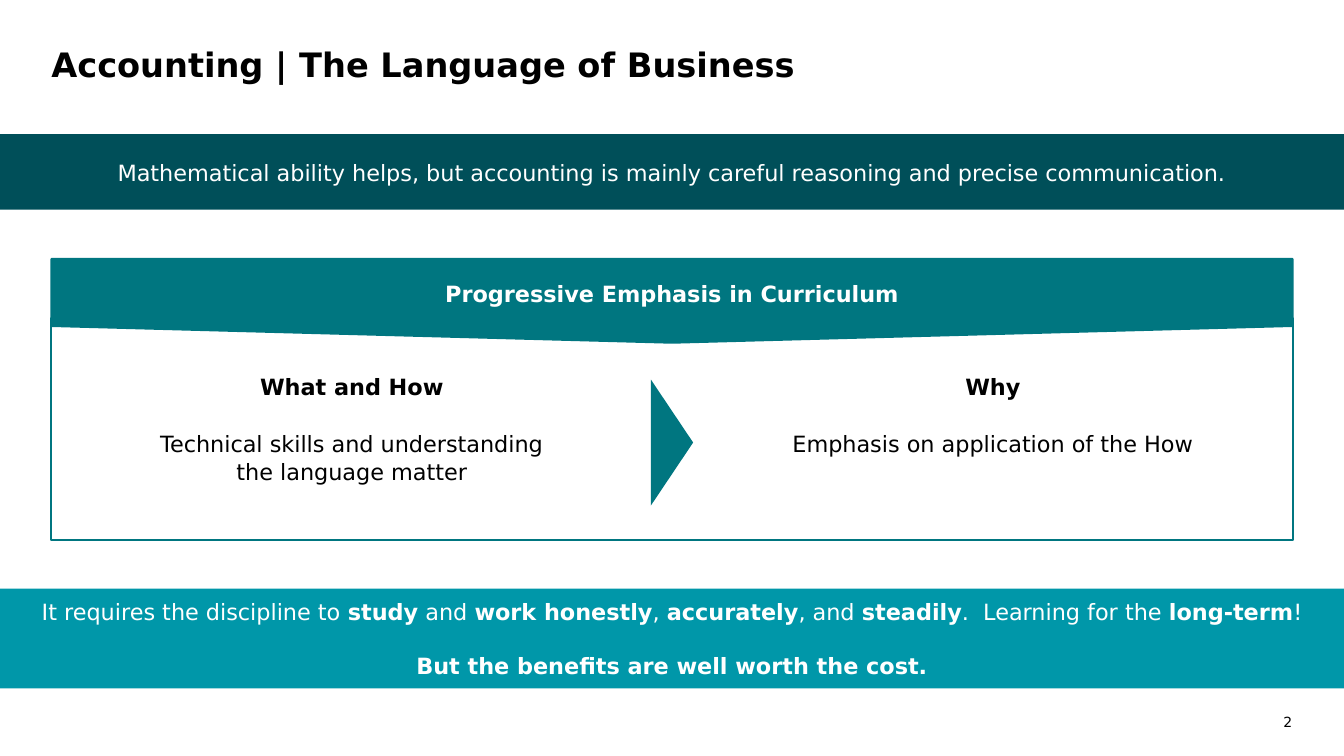
import dataclasses
import typing

import pptx
import pptx.dml.color
import pptx.enum.shapes
import pptx.enum.text
import pptx.util

Pt = pptx.util.Pt
SHAPE = pptx.enum.shapes.MSO_SHAPE
ALIGN = pptx.enum.text.PP_ALIGN
ANCHOR = pptx.enum.text.MSO_ANCHOR

FONT = "DejaVu Sans"
COLORS = {
    "white": "FFFFFF",
    "black": "000000",
    "dark": "004F59",
    "teal": "007680",
    "bright": "0097A9",
}
SLIDE_W, SLIDE_H = 960, 540
MARGIN = 36.7
CONTENT_W = SLIDE_W - 2 * MARGIN
COLUMN_W = 315.4


@dataclasses.dataclass
class Run:
    text: str
    bold: bool = False


@dataclasses.dataclass
class Block:
    """A filled shape with optional outline and text."""
    kind: SHAPE
    box: tuple[float, float, float, float]
    fill: str
    line: str | None = None
    paragraphs: typing.Sequence[typing.Sequence[Run]] = ()
    color: str = "white"
    anchor: ANCHOR = ANCHOR.MIDDLE
    spacing: float = 1.06
    gap: float = 20
    rotation: float = 0


def rgb(name: str) -> pptx.dml.color.RGBColor:
    return pptx.dml.color.RGBColor.from_string(COLORS[name])


def add_run(p, run: Run, size: float, color: str) -> None:
    r = p.add_run()
    r.text = run.text
    r.font.name = FONT
    r.font.size = Pt(size)
    r.font.bold = run.bold
    r.font.color.rgb = rgb(color)


def set_frame(tf, anchor: ANCHOR, inset: float) -> None:
    tf.word_wrap = True
    tf.auto_size = pptx.enum.text.MSO_AUTO_SIZE.NONE
    tf.vertical_anchor = anchor
    tf.margin_left = tf.margin_right = Pt(inset)
    tf.margin_top = tf.margin_bottom = Pt(inset)


def add_block(slide, block: Block) -> None:
    sp = slide.shapes.add_shape(block.kind, *map(Pt, block.box))
    sp.shadow.inherit = False
    sp.rotation = block.rotation
    sp.fill.solid()
    sp.fill.fore_color.rgb = rgb(block.fill)
    if block.line:
        sp.line.color.rgb = rgb(block.line)
        sp.line.width = Pt(1.5)
    else:
        sp.line.fill.background()

    tf = sp.text_frame
    set_frame(tf, block.anchor, 7.2)
    for i, runs in enumerate(block.paragraphs):
        p = tf.add_paragraph() if i else tf.paragraphs[0]
        p.alignment = ALIGN.CENTER
        p.line_spacing = block.spacing
        p.space_before = Pt(block.gap if i else 0)
        for run in runs:
            add_run(p, run, 16, block.color)


def column(left: float, heading: str, body: str) -> Block:
    return Block(SHAPE.RECTANGLE, (left, 258.5, COLUMN_W, 113.8), "white",
                 paragraphs=[[Run(heading, True)], [Run(body)]],
                 color="black", anchor=ANCHOR.TOP)


BLOCKS = [
    # Opening band
    Block(SHAPE.RECTANGLE, (0, 95.8, SLIDE_W, 54), "dark", paragraphs=[[Run(
        "Mathematical ability helps, but accounting is mainly careful "
        "reasoning and precise communication.")]]),
    # Curriculum panel and its header
    Block(SHAPE.RECTANGLE, (MARGIN, 227.5, CONTENT_W, 158.4), "white", "teal"),
    Block(SHAPE.FLOWCHART_OFFPAGE_CONNECTOR, (MARGIN, 185, CONTENT_W, 59.8),
          "teal", "teal",
          paragraphs=[[Run("Progressive Emphasis in Curriculum", True)]]),
    # Two columns with the arrow between them
    column(93.6, "What and How",
           "Technical skills and understanding the language matter"),
    column(551.5, "Why", "Emphasis on application of the How"),
    Block(SHAPE.ISOSCELES_TRIANGLE, (435, 301, 90, 30.2), "teal", rotation=90),
    # Closing band
    Block(SHAPE.RECTANGLE, (0, 420.5, SLIDE_W, 71.3), "bright", paragraphs=[
        [Run("It requires the discipline to "), Run("study", True),
         Run(" and "), Run("work honestly", True),
         Run(", "), Run("accurately", True),
         Run(", and "), Run("steadily", True),
         Run(".  Learning for the "), Run("long-term", True), Run("!")],
        [Run("But the benefits are well worth the cost.", True)],
    ], spacing=1, gap=19),
]


def main() -> None:
    prs = pptx.Presentation()
    prs.slide_width, prs.slide_height = Pt(SLIDE_W), Pt(SLIDE_H)
    slide = prs.slides.add_slide(prs.slide_layouts[5])

    # Title
    title = slide.shapes.title
    title.left, title.top = Pt(MARGIN), Pt(31.7)
    title.width, title.height = Pt(CONTENT_W), Pt(54.7)
    set_frame(title.text_frame, ANCHOR.TOP, 0)
    p = title.text_frame.paragraphs[0]
    p.alignment = ALIGN.LEFT
    add_run(p, Run("Accounting | The Language of Business", True), 24, "black")

    for block in BLOCKS:
        add_block(slide, block)

    # Slide number
    number = slide.shapes.add_textbox(Pt(898.6), Pt(509.8), Pt(24.5), Pt(12.2))
    set_frame(number.text_frame, ANCHOR.TOP, 0)
    p = number.text_frame.paragraphs[0]
    p.alignment = ALIGN.RIGHT
    add_run(p, Run("2"), 10, "black")

    prs.save("out.pptx")


if __name__ == "__main__":
    main()
